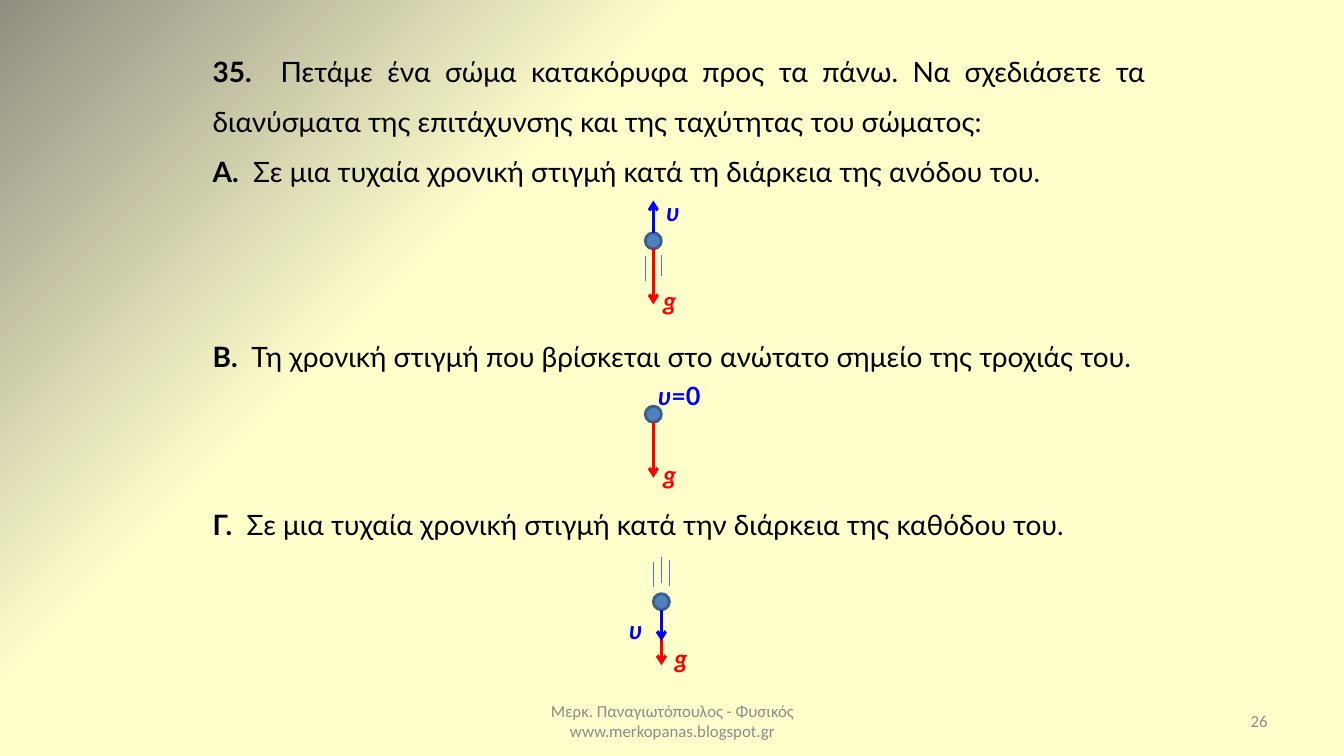
from lxml import etree
from pptx import Presentation
from pptx.dml.color import RGBColor
from pptx.enum.shapes import MSO_CONNECTOR, MSO_SHAPE
from pptx.enum.text import MSO_ANCHOR, MSO_AUTO_SIZE, PP_ALIGN
from pptx.oxml import parse_xml
from pptx.oxml.ns import nsdecls, qn
from pptx.util import Inches, Pt

STRAIGHT, ELLIPSE = MSO_CONNECTOR.STRAIGHT, MSO_SHAPE.OVAL
LEFT, CENTER, RIGHT, JUSTIFY = PP_ALIGN.LEFT, PP_ALIGN.CENTER, PP_ALIGN.RIGHT, PP_ALIGN.JUSTIFY
MIDDLE, TOP = MSO_ANCHOR.MIDDLE, MSO_ANCHOR.TOP

BLACK, GREY, BLUE, RED = "000000", "8C8C8C", "0000FF", "FF0000"
BALL_FILL, BALL_LINE, TRAIL = "4F81BD", "3A5F8C", "4B7EBC"
CREAM, SHADE = "FFFFCC", "918E81"
BALL_SIZE = 0.16
LABEL_HEIGHT = 0.4

# Bold mark, text, line spacing, space before in points
QUESTION = [
    ("35. ", " Πετάμε ένα σώμα κατακόρυφα προς τα πάνω. Να σχεδιάσετε τα "
     "διανύσματα της επιτάχυνσης και της ταχύτητας του σώματος:", 1.5, 0),
    ("Α.", "  Σε μια τυχαία χρονική στιγμή κατά τη διάρκεια της ανόδου του.", 1.5, 0),
    ("Β.", "  Τη χρονική στιγμή που βρίσκεται στο ανώτατο σημείο της τροχιάς του.", 1.5, 96),
    ("Γ.", "  Σε μια τυχαία χρονική στιγμή κατά την διάρκεια της καθόδου του.", 1.0, 96),
]
QUESTION_BOX = (2.01, 0.32, 9.45, 5.15)

FOOTERS = [
    ("Μερκ. Παναγιωτόπουλος - Φυσικός\vwww.merkopanas.blogspot.gr",
     (4.56, 6.95, 4.22, 0.4), CENTER),
    ("26", (9.56, 6.95, 3.11, 0.4), RIGHT),
]

# Trails and arrows: x, start y, end y. Labels: italic text, upright text, left, top, width, turn
DIAGRAMS = [
    {"ball": (6.4, 2.31),
     "trails": [(6.4, 2.54, 2.79), (6.48, 2.57, 2.82), (6.56, 2.53, 2.74)],
     "arrows": [(6.48, 2.31, 1.99, BLUE), (6.48, 2.46, 3.02, RED)],
     "labels": [("υ", "", 6.51, 1.9, 0.39, 0, BLUE), ("g", "", 6.48, 2.78, 0.39, 0, RED)]},
    {"ball": (6.4, 4.03),
     "trails": [],
     "arrows": [(6.48, 4.19, 4.74, RED)],
     "labels": [("υ", "=0", 6.43, 3.72, 0.75, 0, BLUE), ("g", "", 6.48, 4.51, 0.39, 0, RED)]},
    {"ball": (6.48, 5.89),
     "trails": [(6.64, 5.81, 5.56), (6.56, 5.78, 5.53), (6.48, 5.82, 5.58)],
     "arrows": [(6.56, 6.05, 6.6, RED), (6.56, 6.05, 6.36, BLUE)],
     "labels": [("υ", "", 6.14, 6.05, 0.39, 0, BLUE), ("g", "", 6.59, 6.33, 0.39, 357, RED)]},
]


def color(hex_code):
    return RGBColor.from_string(hex_code)


def inches(values):
    return [Inches(value) for value in values]


def add_run(paragraph, text, hex_code, **formats):
    run = paragraph.add_run()
    run.text = text
    for name, value in formats.items():
        setattr(run.font, name, value)
    run.font.color.rgb = color(hex_code)


def add_text_box(parent, box, alignment=LEFT, anchor=TOP):
    """Add an empty wrapping text box; return it with its first paragraph."""
    shape = parent.add_textbox(*inches(box))
    shape.text_frame.word_wrap = True
    shape.text_frame.vertical_anchor = anchor
    paragraph = shape.text_frame.paragraphs[0]
    paragraph.alignment = alignment
    return shape, paragraph


def add_vertical_line(parent, x, start, end, hex_code, width, arrow=False):
    line = parent.add_connector(STRAIGHT, *inches((x, start, x, end)))
    line.line.color.rgb = color(hex_code)
    line.line.width = Pt(width)
    if arrow:
        etree.SubElement(line.line._get_or_add_ln(), qn("a:tailEnd"), type="arrow")
    etree.SubElement(line._element.spPr, qn("a:effectLst"))


def paint_background(slide):
    background = parse_xml(
        f'<p:bg {nsdecls("p", "a")}><p:bgPr><a:gradFill rotWithShape="1"><a:gsLst>'
        f'<a:gs pos="67000"><a:srgbClr val="{CREAM}"/></a:gs>'
        f'<a:gs pos="100000"><a:srgbClr val="{SHADE}"/></a:gs></a:gsLst>'
        '<a:path path="circle"><a:fillToRect l="100000" t="100000"/></a:path>'
        '</a:gradFill><a:effectLst/></p:bgPr></p:bg>')
    slide._element.cSld.insert(0, background)


def write_question(body):
    body.left, body.top, body.width, body.height = inches(QUESTION_BOX)
    frame = body.text_frame
    frame.auto_size = MSO_AUTO_SIZE.NONE
    frame.vertical_anchor = TOP
    for index, (mark, text, spacing, before) in enumerate(QUESTION):
        paragraph = frame.add_paragraph() if index else frame.paragraphs[0]
        properties = paragraph._p.get_or_add_pPr()
        properties.set("marL", "0")
        properties.set("indent", "0")
        etree.SubElement(properties, qn("a:buNone"))
        formats = {"alignment": JUSTIFY, "line_spacing": spacing,
                   "space_before": Pt(before), "space_after": Pt(0)}
        for name, value in formats.items():
            setattr(paragraph, name, value)
        for words, bold in ((mark, True), (text, False)):
            add_run(paragraph, words, BLACK, name="Lato", size=Pt(20), bold=bold)


def draw_diagram(slide, diagram):
    group = slide.shapes.add_group_shape().shapes
    ball = group.add_shape(ELLIPSE, *inches((*diagram["ball"], BALL_SIZE, BALL_SIZE)))
    ball.shadow.inherit = False
    ball.fill.solid()
    ball.fill.fore_color.rgb = color(BALL_FILL)
    ball.line.color.rgb = color(BALL_LINE)
    ball.line.width = Pt(2)
    for trail in diagram["trails"]:
        add_vertical_line(group, *trail, TRAIL, 0.75)
    for arrow in diagram["arrows"]:
        add_vertical_line(group, *arrow, 2.25, arrow=True)
    for symbol, value, left, top, width, turn, hex_code in diagram["labels"]:
        label, paragraph = add_text_box(group, (left, top, width, LABEL_HEIGHT))
        label.rotation = turn
        for text, italic in ((symbol, True), (value, False)):
            if text:
                add_run(paragraph, text, hex_code, name="Lato", size=Pt(18),
                        bold=True, italic=italic)


def main():
    presentation = Presentation()
    presentation.slide_width, presentation.slide_height = inches((13.33, 7.5))
    slide = presentation.slides.add_slide(presentation.slide_layouts[1])
    paint_background(slide)
    title = slide.shapes.title._element
    title.getparent().remove(title)
    write_question(slide.placeholders[1])
    for text, box, alignment in FOOTERS:
        _, paragraph = add_text_box(slide.shapes, box, alignment, MIDDLE)
        for index, line in enumerate(text.split("\v")):
            if index:
                paragraph.add_line_break()
            add_run(paragraph, line, GREY, name="Calibri", size=Pt(12))
    for diagram in DIAGRAMS:
        draw_diagram(slide, diagram)
    presentation.save("out.pptx")


if __name__ == "__main__":
    main()
